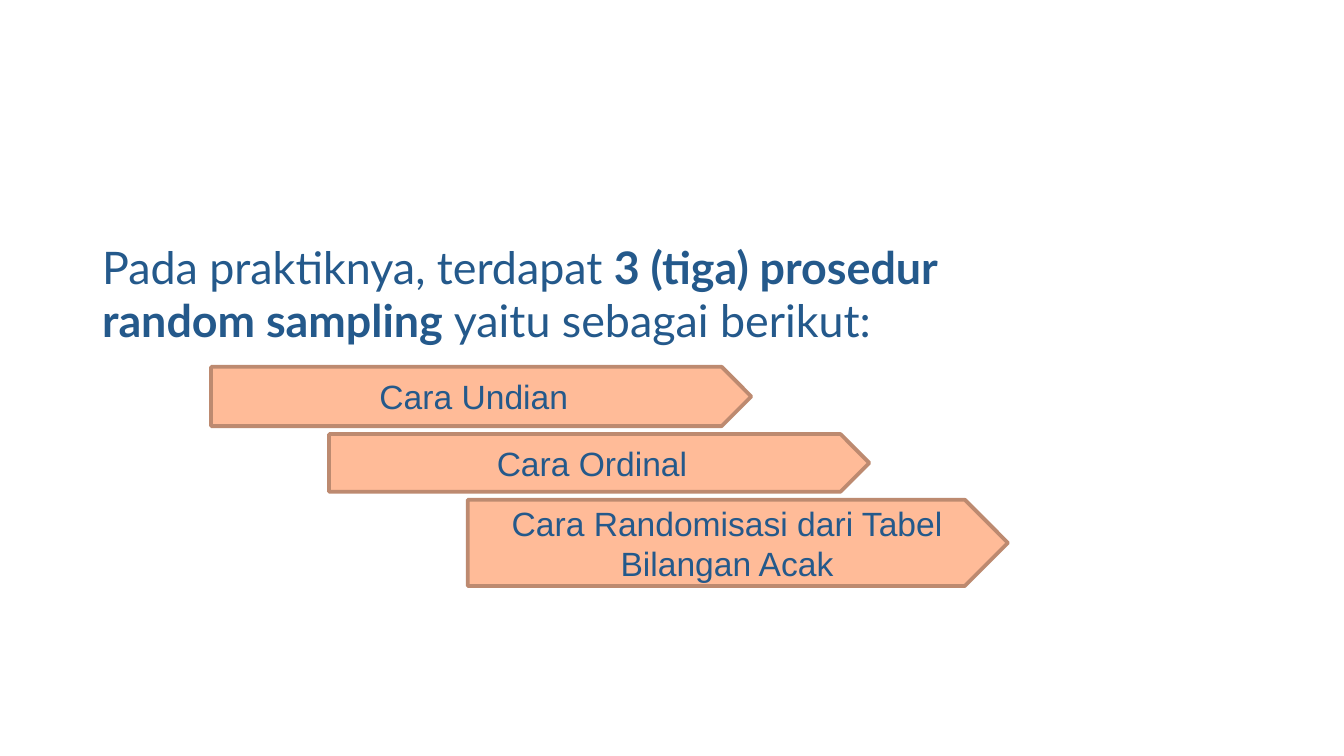
from pptx import Presentation, util as u
from pptx.dml.color import RGBColor
from pptx.enum import shapes, text

BLUE = RGBColor(0x24, 0x59, 0x8B)
PEACH = RGBColor(0xFF, 0xBB, 0x98)
BROWN = RGBColor(0xBD, 0x8A, 0x70)

INTRO = [
    ("Pada praktiknya, terdapat ", False),
    ("3 (tiga) prosedur random sampling ", True),
    ("yaitu sebagai berikut:", False),
]
PROCEDURES = [
    ("Cara Undian", 0, 1.12),
    ("Cara Ordinal", 2.23, 1.09),
    ("Cara Randomisasi dari Tabel Bilangan Acak", 4.85, 1.63),
]
STEP_WIDTH = 10.21
STEP_GAP = 0.15


def set_attributes(target, values):
    """Set every attribute named in values on the target."""
    for name, value in values.items():
        setattr(target, name, value)


def add_text(paragraph, content, size, font_name, bold=False):
    """Append a blue run to the paragraph."""
    run = paragraph.add_run()
    run.text = content
    set_attributes(run.font, {"size": u.Pt(size), "name": font_name, "bold": bold})
    run.font.color.rgb = BLUE


def place_intro(slide, left, top, width, height):
    """Fill the title placeholder with the introductory sentence."""
    title = slide.shapes.title
    set_attributes(title, {
        "left": u.Cm(left), "top": u.Cm(top),
        "width": u.Cm(width), "height": u.Cm(height),
    })
    margin = u.Cm(0.25)
    set_attributes(title.text_frame, {
        "word_wrap": True,
        "auto_size": text.MSO_AUTO_SIZE.NONE,
        "vertical_anchor": text.MSO_ANCHOR.MIDDLE,
        "margin_left": margin, "margin_right": margin,
        "margin_top": margin, "margin_bottom": margin,
    })
    paragraph = title.text_frame.paragraphs[0]
    set_attributes(paragraph, {"alignment": text.PP_ALIGN.LEFT, "line_spacing": 1.0})
    for content, bold in INTRO:
        add_text(paragraph, content, 24, "Lato", bold)


def place_procedures(slide, left, top):
    """Stack the procedure arrows stepwise from the given corner."""
    for content, indent, height in PROCEDURES:
        arrow = slide.shapes.add_shape(
            shapes.MSO_SHAPE.PENTAGON,
            u.Cm(left + indent), u.Cm(top), u.Cm(STEP_WIDTH), u.Cm(height))
        arrow.shadow.inherit = False
        arrow.fill.solid()
        arrow.fill.fore_color.rgb = PEACH
        arrow.line.color.rgb = BROWN
        arrow.line.width = u.Pt(2)
        set_attributes(arrow.text_frame, {
            "word_wrap": True, "vertical_anchor": text.MSO_ANCHOR.MIDDLE,
        })
        paragraph = arrow.text_frame.paragraphs[0]
        paragraph.alignment = text.PP_ALIGN.CENTER
        add_text(paragraph, content, 18, "Arial")
        top += height + STEP_GAP


def main():
    """Build the slide and save the presentation."""
    presentation = Presentation()
    set_attributes(presentation, {
        "slide_width": u.Cm(25.4), "slide_height": u.Cm(14.28),
    })
    slide = presentation.slides.add_slide(presentation.slide_layouts[5])
    place_intro(slide, 1.68, 4.72, 19.25, 1.63)
    place_procedures(slide, 3.99, 6.93)
    presentation.save("out.pptx")


if __name__ == "__main__":
    main()
